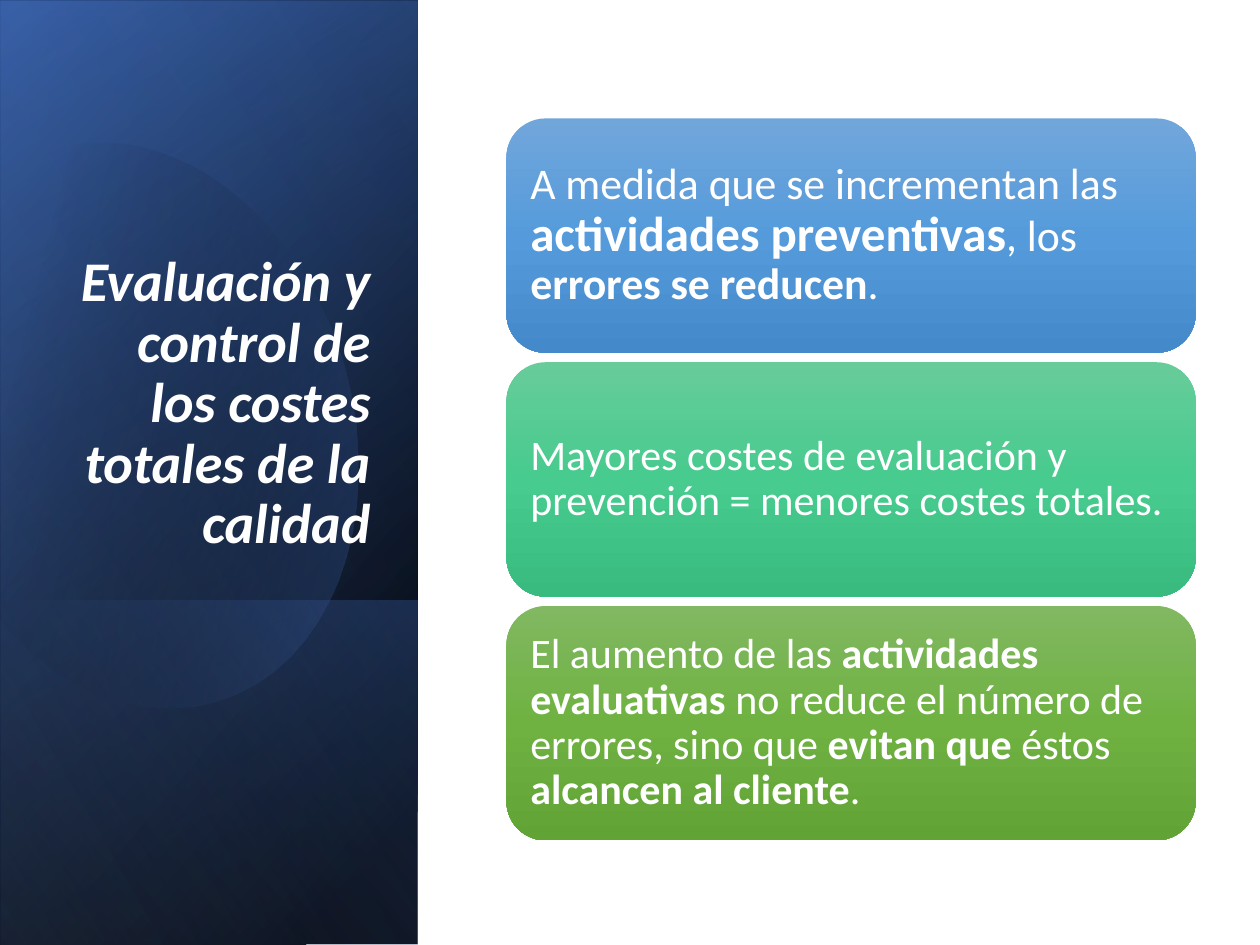
import math
from typing import NamedTuple

from lxml import etree
from pptx import Presentation
from pptx.dml.color import RGBColor
from pptx.enum import shapes, text
from pptx.oxml import ns
from pptx.util import Inches, Pt

FONT = "Calibri"
WHITE = "FFFFFF"


class Stop(NamedTuple):
    position: int
    color: str
    opacity: int = 100


class Panel(NamedTuple):
    """A rectangle turned by 90 degrees; the box is the one before turning."""
    left: float
    top: float
    width: float
    stops: list[Stop]
    angle: int


class Run(NamedTuple):
    words: str
    size: int = 24
    bold: bool = False
    italic: bool = False


class Card(NamedTuple):
    colors: tuple[str, str, str]
    runs: list[Run]


PANEL_HEIGHT = 3.31
BASE_PANELS = [
    Panel(-2.09, 2.09, 7.5, [Stop(8, "000000"), Stop(100, "2F5597")], 50),
    Panel(-2.09, 2.11, 7.5, [Stop(0, "000000", 0), Stop(99, "4472C4", 46)], 30),
    Panel(0.29, 4.48, 2.74, [Stop(2, "4472C4", 29), Stop(100, "000000", 30)], 130),
]
TOP_PANEL = Panel(-2.09, 2.09, 7.5, [Stop(0, "000000", 0), Stop(99, "8FAADC", 11)], 120)

# Each segment holds the points after its start: one for a line, three for a curve.
BLOB_START = (0.96, 1.14)
BLOB_SEGMENTS = [
    [(1.71, 1.22), (2.44, 1.92), (2.73, 2.9)],
    [(3.07, 4.12), (2.62, 5.31), (1.71, 5.57)],
    [(1.14, 5.74), (0.53, 5.5), (0.07, 5)],
    [(-0.03, 4.88)],
    [(-0.25, 1.66)],
    [(-0.15, 1.54)],
    [(0.02, 1.37), (0.22, 1.25), (0.45, 1.18)],
    [(0.62, 1.13), (0.79, 1.12), (0.96, 1.14)],
]
BLOB_CENTER = (1.19, 3.345)
BLOB_TILT = -16.1
BLOB_STOPS = [Stop(29, "000000", 0), Stop(100, "4472C4", 43)]

TITLE = Run("Evaluación y control de los costes totales de la calidad", 32, True, True)

CARD_LEFT, CARD_TOP, CARD_WIDTH, CARD_HEIGHT = 4.02, 0.94, 5.47, 1.86
CARD_PITCH = 1.935
CARDS = [
    Card(("71A6DB", "559BDB", "448ACA"), [
        Run("A medida que se incrementan las ", 25),
        Run("actividades preventivas", 28, True),
        Run(", los ", 25),
        Run("errores se reducen", 25, True),
        Run(".", 25),
    ]),
    Card(("67CC9A", "47CB8E", "39BB7F"), [
        Run("Mayores costes de evaluación y prevención = menores costes totales."),
    ]),
    Card(("81B861", "6FB242", "62A336"), [
        Run("El aumento de las "),
        Run("actividades evaluativas ", bold=True),
        Run("no reduce el número de errores, sino que "),
        Run("evitan que", bold=True),
        Run(" éstos "),
        Run("alcancen al cliente", bold=True),
        Run("."),
    ]),
]


def rgb(color: str) -> RGBColor:
    return RGBColor.from_string(color)


def style_gradient(shape, stops: list[Stop], angle: float) -> None:
    """Give the shape a linear gradient, with no line and no shadow."""
    shape.shadow.inherit = False
    shape.line.fill.background()
    shape.fill.gradient()
    gradient = shape._element.spPr.find(ns.qn("a:gradFill"))
    gradient.set("rotWithShape", "1")
    for child in list(gradient):
        gradient.remove(child)
    stop_list = etree.SubElement(gradient, ns.qn("a:gsLst"))
    for stop in stops:
        mark = etree.SubElement(stop_list, ns.qn("a:gs"), pos=str(stop.position * 1000))
        color = etree.SubElement(mark, ns.qn("a:srgbClr"), val=stop.color)
        if stop.opacity < 100:
            etree.SubElement(color, ns.qn("a:alpha"), val=str(stop.opacity * 1000))
    etree.SubElement(gradient, ns.qn("a:lin"), ang=str(round(angle * 60000)), scaled="0")


def add_panel(slide, panel: Panel) -> None:
    shape = slide.shapes.add_shape(
        shapes.MSO_SHAPE.RECTANGLE, Inches(panel.left), Inches(panel.top),
        Inches(panel.width), Inches(PANEL_HEIGHT))
    shape.rotation = 90
    shape._element.spPr.find(ns.qn("a:xfrm")).set("flipH", "1")
    style_gradient(shape, panel.stops, panel.angle)


def outline_points(steps: int = 16) -> list[tuple[float, float]]:
    """Turn the blob's lines and Bézier curves into a chain of points."""
    points = [BLOB_START]
    for segment in BLOB_SEGMENTS:
        if len(segment) == 1:
            points.append(segment[0])
            continue
        corners = [points[-1], *segment]
        for step in range(1, steps + 1):
            t = step / steps
            weights = [math.comb(3, i) * t**i * (1 - t)**(3 - i) for i in range(4)]
            points.append((sum(w * x for w, (x, _) in zip(weights, corners)),
                           sum(w * y for w, (_, y) in zip(weights, corners))))
    return points


def add_blob(slide) -> None:
    """Draw the blob upright, then tilt it, so that its gradient tilts too."""
    center_x, center_y = BLOB_CENTER
    cos, sin = math.cos(math.radians(-BLOB_TILT)), math.sin(math.radians(-BLOB_TILT))
    upright = [(Inches(center_x + (x - center_x) * cos - (y - center_y) * sin),
                Inches(center_y + (x - center_x) * sin + (y - center_y) * cos))
               for x, y in outline_points()]
    builder = slide.shapes.build_freeform(*upright[0])
    builder.add_line_segments(upright[1:], close=True)
    blob = builder.convert_to_shape()
    blob.rotation = BLOB_TILT
    style_gradient(blob, BLOB_STOPS, 30)


def write_runs(frame, runs: list[Run], align, anchor) -> None:
    frame.word_wrap = True
    frame.vertical_anchor = anchor
    paragraph = frame.paragraphs[0]
    paragraph.alignment = align
    paragraph.line_spacing = 0.9
    for run in runs:
        part = paragraph.add_run()
        part.text = run.words
        part.font.name = FONT
        part.font.size = Pt(run.size)
        part.font.bold = run.bold
        part.font.italic = run.italic
        part.font.color.rgb = rgb(WHITE)


def add_title(slide) -> None:
    title = slide.shapes.add_textbox(Inches(0.48), Inches(1.84), Inches(2.56), Inches(2.62))
    write_runs(title.text_frame, [TITLE], text.PP_ALIGN.RIGHT, text.MSO_ANCHOR.BOTTOM)


def add_card(slide, card: Card, top: float) -> None:
    shape = slide.shapes.add_shape(
        shapes.MSO_SHAPE.ROUNDED_RECTANGLE, Inches(CARD_LEFT), Inches(top),
        Inches(CARD_WIDTH), Inches(CARD_HEIGHT))
    style_gradient(shape, [Stop(i * 50, color) for i, color in enumerate(card.colors)], 90)
    frame = shape.text_frame
    frame.margin_left = frame.margin_right = Inches(0.1)
    frame.margin_top = frame.margin_bottom = Inches(0.1)
    write_runs(frame, card.runs, text.PP_ALIGN.LEFT, text.MSO_ANCHOR.MIDDLE)


def main() -> None:
    deck = Presentation()
    deck.slide_width, deck.slide_height = Inches(10), Inches(7.5)
    slide = deck.slides.add_slide(deck.slide_layouts[6])
    for panel in BASE_PANELS:
        add_panel(slide, panel)
    add_blob(slide)
    add_panel(slide, TOP_PANEL)
    add_title(slide)
    for row, card in enumerate(CARDS):
        add_card(slide, card, CARD_TOP + row * CARD_PITCH)
    deck.save("out.pptx")


if __name__ == "__main__":
    main()
